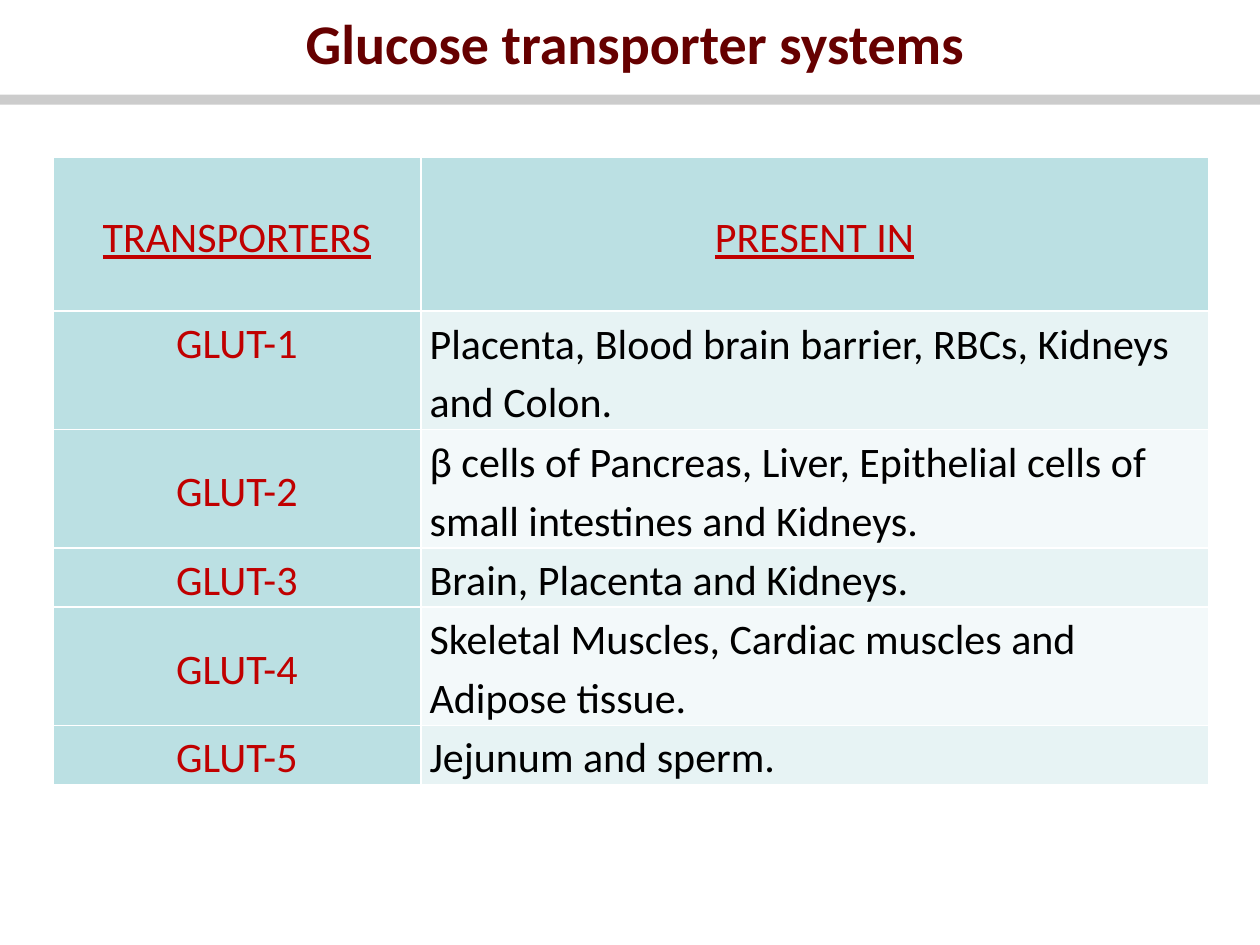
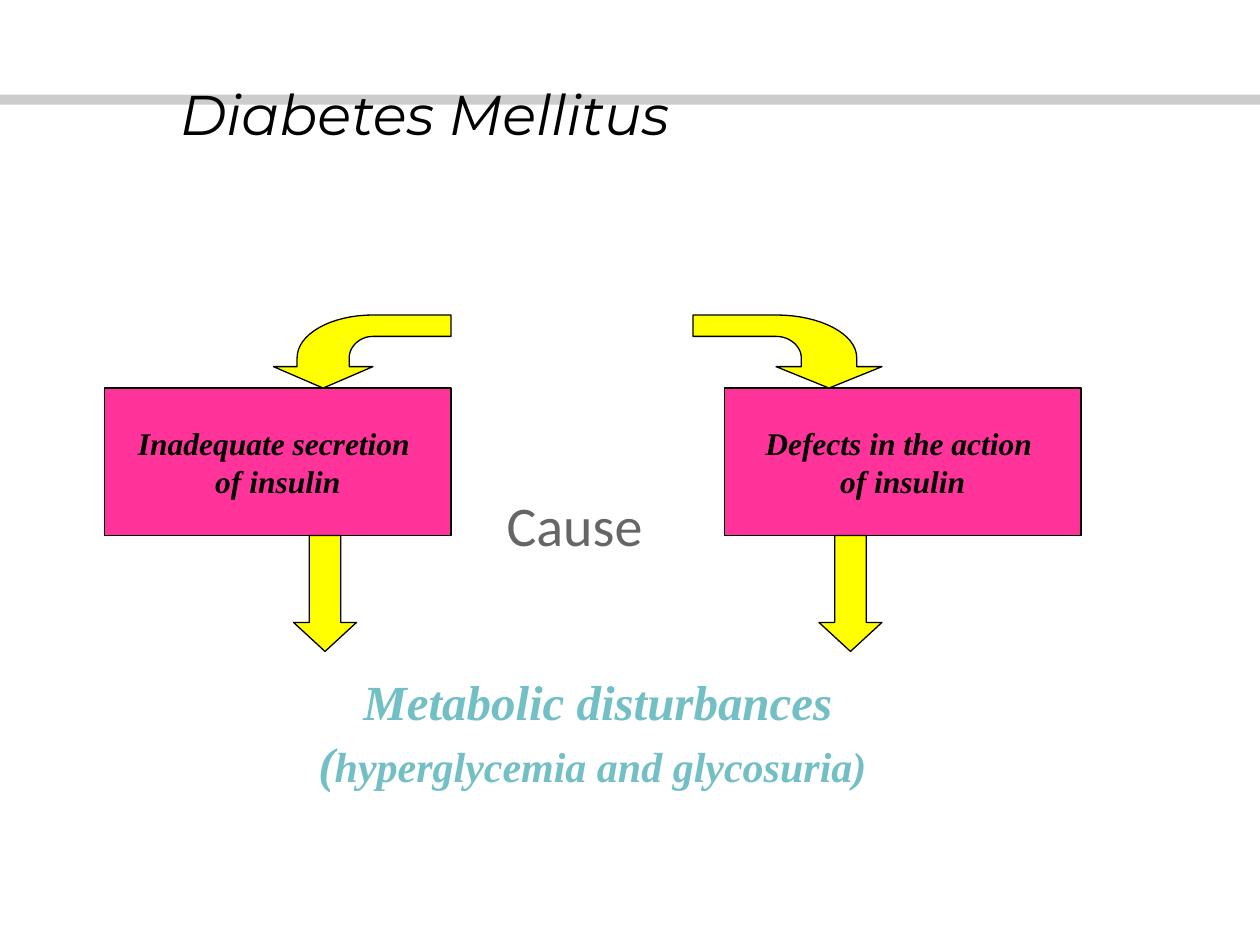
from lxml import etree
from pptx import Presentation
from pptx.dml.color import RGBColor
from pptx.enum.shapes import MSO_SHAPE
from pptx.enum.text import MSO_ANCHOR, MSO_AUTO_SIZE, PP_ALIGN
from pptx.oxml import parse_xml
from pptx.oxml.ns import nsdecls, qn
from pptx.util import Inches, Pt

COLORS = {
    "band": "CCCCCC", "title": "660000", "header": "C00000", "text": "000000",
    "line": "000000", "border": "FFFFFF", "teal": "BBE0E3", "odd": "E7F3F4",
    "even": "F3F9FA", "pink": "FF3399", "yellow": "FFFF00", "cause": "666666",
    "result": "72BFC5",
}


def style_text(paragraph, size, font, color, bold=False, italic=False, underline=False):
    for run in paragraph.runs:
        run.font.size = Pt(size)
        run.font.bold = bold
        run.font.italic = italic
        run.font.underline = underline
        run.font.color.rgb = RGBColor.from_string(COLORS[color])
        run.font.name = font


def paint(shape, fill, line=None):
    shape.shadow.inherit = False
    shape.fill.solid()
    shape.fill.fore_color.rgb = RGBColor.from_string(COLORS[fill])
    if line:
        shape.line.color.rgb = RGBColor.from_string(COLORS[line])
        shape.line.width = Pt(0.75)
    else:
        shape.line.fill.background()


presentation = Presentation()
presentation.slide_width = Inches(10)
presentation.slide_height = Inches(7.5)
transporter_slide = presentation.slides.add_slide(presentation.slide_layouts[5])
diabetes_slide = presentation.slides.add_slide(presentation.slide_layouts[1])

band = transporter_slide.shapes.add_shape(
    MSO_SHAPE.RECTANGLE, 0, Inches(0.75), Inches(10), Inches(0.08))
paint(band, "band")
presentation.slide_master.element.cSld.spTree.insert(2, band.element)

titles = [
    (transporter_slide, "Glucose transporter systems", (0.25, 0.08, 9.58, 0.58),
     PP_ALIGN.CENTER, MSO_ANCHOR.MIDDLE, 0.9, ("Calibri", "title", True, False)),
    (diabetes_slide, "Diabetes Mellitus", (1.33, 0.58, 7.08, 1),
     PP_ALIGN.LEFT, MSO_ANCHOR.TOP, 1.0, ("Montserrat", "text", False, True)),
]
for slide, text, box, alignment, anchor, spacing, style in titles:
    title = slide.shapes.title
    title.left, title.top, title.width, title.height = [Inches(value) for value in box]
    title.text_frame.text = text
    title.text_frame.auto_size = MSO_AUTO_SIZE.NONE
    title.text_frame.vertical_anchor = anchor
    paragraph = title.text_frame.paragraphs[0]
    paragraph.alignment = alignment
    paragraph.line_spacing = spacing
    style_text(paragraph, 32, *style)

rows = [
    ("TRANSPORTERS", "PRESENT IN", 1.22),
    ("GLUT-1", "Placenta, Blood brain barrier, RBCs, Kidneys and Colon.", 0.94),
    ("GLUT-2", "β cells of Pancreas, Liver, Epithelial cells of small intestines and Kidneys.", 0.94),
    ("GLUT-3", "Brain, Placenta and Kidneys.", 0.46),
    ("GLUT-4", "Skeletal Muscles, Cardiac muscles and Adipose tissue.", 0.94),
    ("GLUT-5", "Jejunum and sperm.", 0.46),
]
table = transporter_slide.shapes.add_table(
    len(rows), 2, Inches(0.42), Inches(1.25), Inches(9.17),
    Inches(sum(row[2] for row in rows))).table
table.columns[0].width = Inches(2.92)
table.columns[1].width = Inches(6.25)
for row_index, (transporter, location, height) in enumerate(rows):
    table.rows[row_index].height = Inches(height)
    for column_index, text in enumerate((transporter, location)):
        cell = table.cell(row_index, column_index)
        is_header = row_index == 0
        is_label = is_header or column_index == 0
        cell.text_frame.text = text
        cell.vertical_anchor = MSO_ANCHOR.TOP if text == "GLUT-1" else MSO_ANCHOR.MIDDLE
        cell.margin_left = cell.margin_right = Inches(0.07)
        cell.margin_top = cell.margin_bottom = 0
        paragraph = cell.text_frame.paragraphs[0]
        paragraph.alignment = PP_ALIGN.CENTER if is_label else PP_ALIGN.LEFT
        paragraph.line_spacing = 1.15
        style_text(paragraph, 24, "Calibri", "header" if is_label else "text",
                   underline=is_header)
        cell_properties = cell._tc.get_or_add_tcPr()
        for side in ("lnL", "lnR", "lnT", "lnB"):
            cell_properties.append(parse_xml(
                f'<a:{side} {nsdecls("a")} w="12700"><a:solidFill>'
                f'<a:srgbClr val="{COLORS["border"]}"/></a:solidFill></a:{side}>'))
        cell.fill.solid()
        fill = "teal" if is_label else ("odd" if row_index % 2 else "even")
        cell.fill.fore_color.rgb = RGBColor.from_string(COLORS[fill])

cause = diabetes_slide.placeholders[1]
cause.left, cause.top, cause.width, cause.height = [
    Inches(value) for value in (0.5, 3.19, 9, 1.29)]
cause.text_frame.text = "Cause"
cause.text_frame.auto_size = MSO_AUTO_SIZE.NONE
cause.text_frame.vertical_anchor = MSO_ANCHOR.BOTTOM
paragraph = cause.text_frame.paragraphs[0]
paragraph.line_spacing = 0.9
style_text(paragraph, 32, "Calibri", "cause")
properties = paragraph._p.get_or_add_pPr()
properties.set("marL", str(Inches(3.42)))
properties.set("indent", "0")
etree.SubElement(properties, qn("a:buNone"))
text_fill = paragraph.runs[0].font._element.find(qn("a:solidFill"))
text_fill.addnext(parse_xml(
    f'<a:effectLst {nsdecls("a")}><a:outerShdw dist="38100" dir="2700000">'
    '<a:srgbClr val="000000"/></a:outerShdw></a:effectLst>'))

defects = [
    (0.83, 2.75, ("Inadequate secretion ", "of insulin"), 2.33, 3.58, -0.94),
    (5.75, 2.83, ("Defects in the action ", "of insulin"), 6.5, 5.5, 1),
]
bend_path = [
    [(0, 2.5)],
    [(0.66, 2.5)],
    [(1.01, 2.5), (1.3, 2.65), (1.3, 2.84)],
    [(1.3, 2.91)],
    [(1.5, 2.91)],
    [(1.08, 3.08)],
    [(0.66, 2.91)],
    [(0.86, 2.91)],
    [(0.86, 2.84)],
    [(0.86, 2.75), (0.77, 2.67), (0.66, 2.67)],
    [(0, 2.67)],
]
bend_points = []
for segment in bend_path:
    if len(segment) == 1:
        bend_points += segment
        continue
    curve = [bend_points[-1]] + segment
    for step in range(1, 17):
        t = step / 16
        weights = ((1 - t) ** 3, 3 * t * (1 - t) ** 2, 3 * t ** 2 * (1 - t), t ** 3)
        bend_points.append(tuple(
            sum(weight * point[axis] for weight, point in zip(weights, curve))
            for axis in (0, 1)))

for left, width, lines, arrow_left, tail, stretch in defects:
    box = diabetes_slide.shapes.add_shape(
        MSO_SHAPE.RECTANGLE, Inches(left), Inches(3.08), Inches(width), Inches(1.17))
    paint(box, "pink", "line")
    box.text_frame.text = "\n".join(lines)
    box.text_frame.word_wrap = False
    box.text_frame.vertical_anchor = MSO_ANCHOR.MIDDLE
    for paragraph in box.text_frame.paragraphs:
        paragraph.alignment = PP_ALIGN.CENTER
        style_text(paragraph, 18, "Times New Roman", "text", bold=True, italic=True)

    outline = [(Inches(tail + stretch * x), Inches(y)) for x, y in bend_points]
    builder = diabetes_slide.shapes.build_freeform(*outline[0])
    builder.add_line_segments(outline[1:], close=True)
    paint(builder.convert_to_shape(), "yellow", "line")

    down_arrow = diabetes_slide.shapes.add_shape(
        MSO_SHAPE.DOWN_ARROW, Inches(arrow_left), Inches(4.25), Inches(0.5), Inches(0.92))
    down_arrow.adjustments[0] = 0.5
    down_arrow.adjustments[1] = 0.46
    paint(down_arrow, "yellow", "line")

result = diabetes_slide.shapes.add_textbox(
    Inches(2.08), Inches(5.25), Inches(5.33), Inches(1.03))
result.text_frame.word_wrap = True
paragraph = result.text_frame.paragraphs[0]
paragraph.alignment = PP_ALIGN.CENTER
paragraph.line_spacing = 1.06
for text in ("Metabolic disturbances (", "hyperglycemia and glycosuria) "):
    paragraph.add_run().text = text
style_text(paragraph, 28, "Times New Roman", "result", bold=True, italic=True)
paragraph.runs[1].font.size = Pt(24)

presentation.save("out.pptx")
